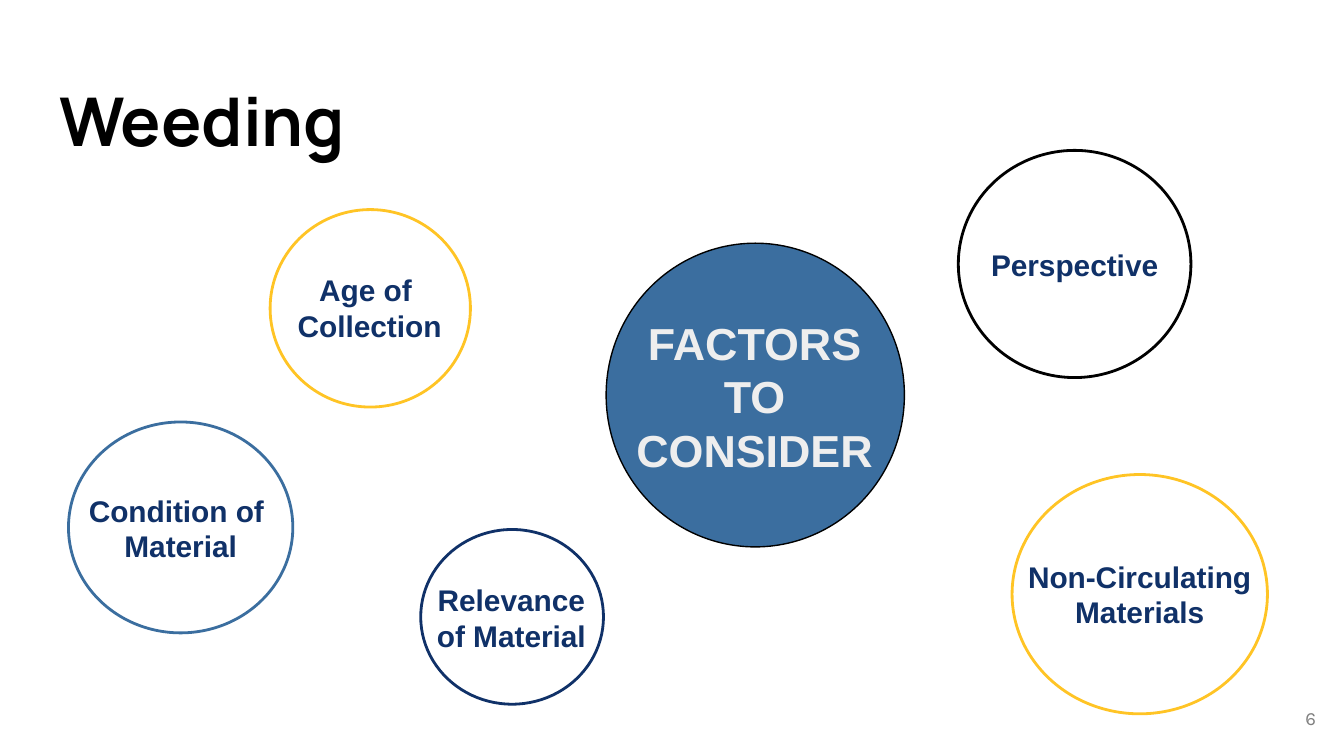
from pptx import Presentation
from pptx.dml.color import RGBColor
from pptx.enum.shapes import MSO_SHAPE
from pptx.enum.text import MSO_ANCHOR, MSO_AUTO_SIZE, PP_ALIGN
from pptx.util import Pt

BLACK = RGBColor(0, 0, 0)
GRAY = RGBColor(0x7F, 0x7F, 0x7F)
PALE = RGBColor(0xEE, 0xEE, 0xEE)
BLUE = RGBColor(0x3B, 0x6E, 0x9F)
NAVY = RGBColor(0x10, 0x31, 0x68)
GOLD = RGBColor(0xFF, 0xC4, 0x25)

FACTORS = [
    ((144.7, 112.3, 107.3, 105.8), GOLD, (139, 138.2, 118.1, 53.3), "Age of \nCollection"),
    ((542.2, 254.2, 136.8, 128.2), GOLD, (513.4, 291.6, 194.4, 53.3), "Non-Circulating Materials"),
    ((513.4, 80.6, 124.6, 121.7), BLACK, (513.4, 115.2, 124.6, 53.3), "Perspective"),
    ((225.4, 283.7, 97.9, 93.6), NAVY, (211.7, 311, 124.6, 39.6), "Relevance\nof Material"),
    ((36.7, 226.1, 120.2, 113), BLUE, (8.6, 256.3, 176.4, 53.3), "Condition of \nMaterial"),
]


class Deck:
    inset = Pt(7.2)

    def __init__(self):
        self.file = Presentation()
        self.file.slide_width, self.file.slide_height = Pt(720), Pt(405)
        self.slide = self.file.slides.add_slide(self.file.slide_layouts[5])

    def style(self, shape, text, size, color, font="Arial", bold=True,
              align=PP_ALIGN.CENTER, anchor=MSO_ANCHOR.MIDDLE):
        frame = shape.text_frame
        frame.text = text
        frame.word_wrap = True
        frame.auto_size = MSO_AUTO_SIZE.NONE
        frame.vertical_anchor = anchor
        frame.margin_left = frame.margin_right = self.inset
        frame.margin_top = frame.margin_bottom = self.inset
        for para in frame.paragraphs:
            para.alignment = align
            for run in para.runs:
                run.font.name, run.font.size = font, Pt(size)
                run.font.bold = bold
                run.font.color.rgb = color

    def title(self, box, text):
        shape = self.slide.shapes.title
        shape.left, shape.top, shape.width, shape.height = map(Pt, box)
        self.style(shape, text, 36, BLACK, "Manrope",
                   align=PP_ALIGN.LEFT, anchor=MSO_ANCHOR.TOP)

    def label(self, home, box, text, size, color, **looks):
        self.style(home.add_textbox(*map(Pt, box)), text, size, color, **looks)

    def circle(self, home, box, line, width, fill=None):
        shape = home.add_shape(MSO_SHAPE.OVAL, *map(Pt, box))
        shape.shadow.inherit = False
        shape.line.color.rgb, shape.line.width = line, Pt(width)
        if fill is None:
            shape.fill.background()
        else:
            shape.fill.solid()
            shape.fill.fore_color.rgb = fill

    def factor(self, ring, line, box, text):
        group = self.slide.shapes.add_group_shape().shapes
        self.circle(group, ring, line, 1.5)
        self.label(group, box, text, 16, NAVY)


def main():
    deck = Deck()
    shapes = deck.slide.shapes
    deck.title((24.5, 35.3, 671, 49), "Weeding")
    deck.label(shapes, (668.9, 369.4, 43.2, 31), "6", 10, GRAY,
               font="Karla", bold=False, align=PP_ALIGN.RIGHT)
    deck.circle(shapes, (324.7, 130.3, 159.8, 162.7), BLACK, 0.75, BLUE)
    deck.label(shapes, (321.8, 161.3, 164.9, 101.5), "FACTORS TO\nCONSIDER", 24, PALE)
    for factor in FACTORS:
        deck.factor(*factor)
    deck.file.save("out.pptx")


if __name__ == "__main__":
    main()
